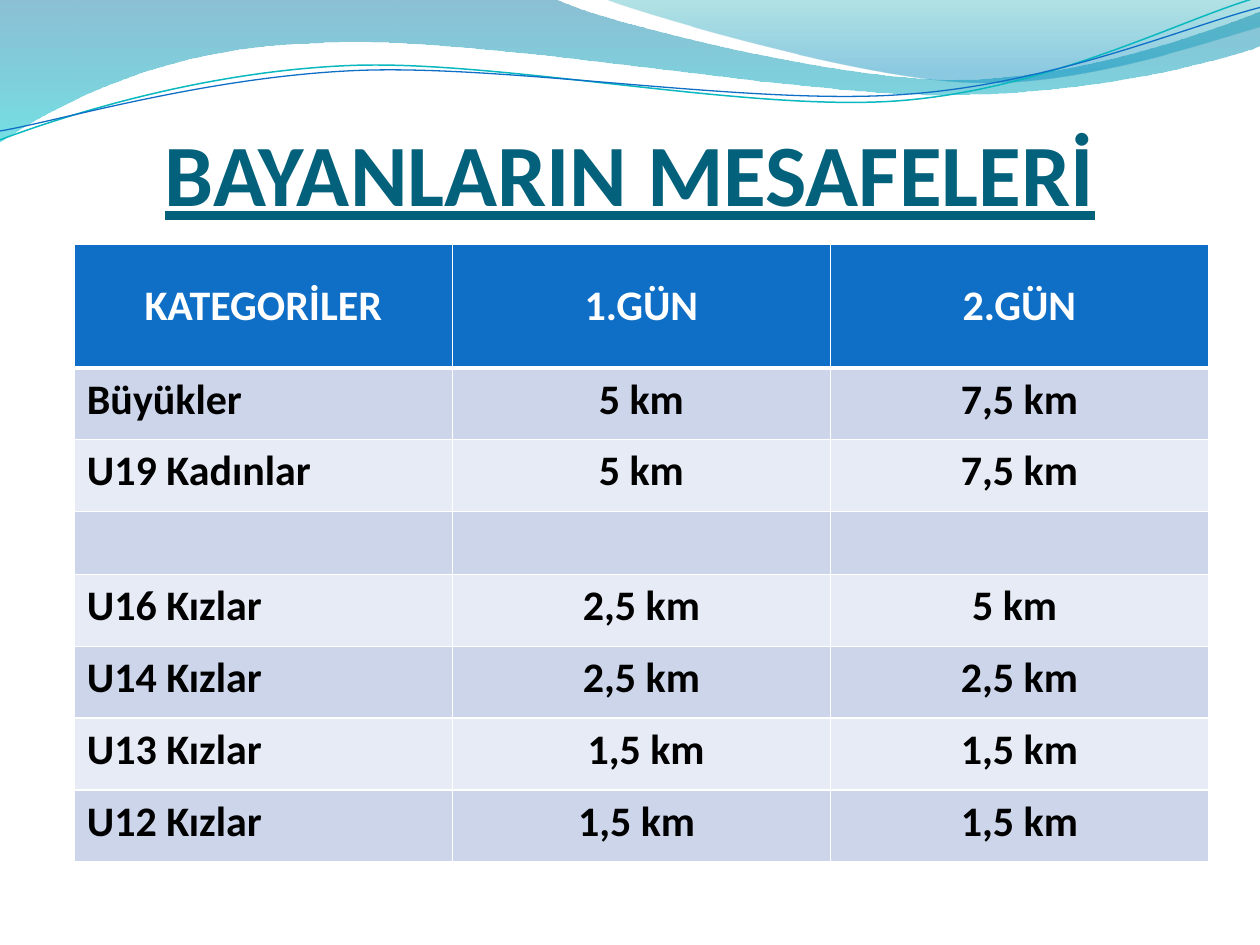
from dataclasses import dataclass
from math import cos, radians, sin
from typing import Optional

from lxml.etree import SubElement
from pptx import Presentation
from pptx.dml.color import RGBColor
from pptx.enum.text import MSO_ANCHOR, PP_ALIGN
from pptx.oxml.ns import qn
from pptx.util import Inches, Pt

WHITE = RGBColor(0xFF, 0xFF, 0xFF)
BLACK = RGBColor(0x00, 0x00, 0x00)
BLUE = RGBColor(0x0F, 0x6F, 0xC6)
TEAL = RGBColor(0x0A, 0xB8, 0xBF)
TITLE_TEAL = RGBColor(0x04, 0x61, 0x7B)
BAND_DARK = RGBColor(0xCC, 0xD5, 0xEA)
BAND_LIGHT = RGBColor(0xE7, 0xEB, 0xF5)
WAVE_BLUE = RGBColor(0x00, 0x74, 0xA1)
WAVE_CYAN = RGBColor(0x00, 0xC6, 0xCF)
CREST_GREEN = RGBColor(0x00, 0xA1, 0xA9)
CREST_BLUE = RGBColor(0x00, 0x8B, 0xBF)
FONT = "Calibri"

Point = tuple[float, float]


@dataclass
class GradientStop:
    position: float
    color: RGBColor
    opacity: int


@dataclass
class Wave:
    """Each segment has two numbers for a line or six for a cubic curve."""
    start: Point
    segments: list[tuple[float, ...]]
    stops: Optional[list[GradientStop]] = None
    line_color: Optional[RGBColor] = None
    line_width: float = 0
    rotation: float = 0
    center: Point = (0, 0)


WAVES = [
    Wave((0, 0), [
        (4.4, -0.01),
        (4.76, 0.17, 6.64, 0.63, 7.58, 0.63),
        (8.53, 0.63, 9.58, 0.26, 10, 0.09),
        (10.01, 0.36),
        (9.83, 0.44, 8.7, 0.76, 7.46, 0.75),
        (6.22, 0.75, 3.82, 0.28, 2.57, 0.34),
        (1.29, 0.36, 0.46, 0.83, -0.01, 1.13),
    ], stops=[GradientStop(0, WAVE_BLUE, 45), GradientStop(1, WAVE_CYAN, 55)]),
    Wave((4.79, -0.01), [
        (5.09, 0.11, 6.82, 0.62, 7.69, 0.65),
        (8.56, 0.69, 9.61, 0.32, 10, 0.21),
        (10, 0),
    ], stops=[GradientStop(0, CREST_GREEN, 30), GradientStop(0.8, CREST_BLUE, 45)]),
    Wave((0, 1.11), [
        (0.48, 0.93, 1.58, 0.57, 2.77, 0.52),
        (3.95, 0.47, 5.93, 0.89, 7.13, 0.8),
        (8.33, 0.71, 9.38, 0.15, 9.98, -0.02),
    ], line_color=TEAL, line_width=0.85, rotation=357.3, center=(4.99, 0.57)),
    Wave((0, 1.04), [
        (0.47, 0.96, 1.64, 0.61, 2.83, 0.56),
        (4.03, 0.51, 5.97, 0.84, 7.17, 0.75),
        (8.36, 0.67, 9.41, 0.21, 10, 0.06),
    ], line_color=BLUE, line_width=0.75, rotation=357.3, center=(5, 0.59)),
]

ROWS = [
    ("KATEGORİLER", "1.GÜN", "2.GÜN"),
    ("Büyükler", "5 km", "7,5 km"),
    ("U19 Kadınlar", "5 km", "7,5 km"),
    ("", "", ""),
    ("U16 Kızlar", "2,5 km", "5 km "),
    ("U14 Kızlar", "2,5 km", "2,5 km"),
    ("U13 Kızlar", " 1,5 km", "1,5 km"),
    ("U12 Kızlar", "1,5 km ", "1,5 km"),
]
HEADER_HEIGHT, ROW_HEIGHT, GAP_HEIGHT = 0.98, 0.57, 0.5
COLUMN_WIDTH = 3


def before_rotation(point: Point, wave: Wave) -> Point:
    """Where a point lies before the wave is turned about its center."""
    angle = radians(-wave.rotation)
    x, y = point[0] - wave.center[0], point[1] - wave.center[1]
    return (wave.center[0] + x * cos(angle) - y * sin(angle),
            wave.center[1] + x * sin(angle) + y * cos(angle))


def bend_segments(shape, segments: list[tuple[float, ...]]) -> None:
    """Join each three lines that stand for a curve's points into one cubic curve."""
    lines = iter(list(shape.element.spPr.iter(qn("a:lnTo"))))
    for segment in segments:
        first = next(lines)
        if len(segment) == 6:
            first.tag = qn("a:cubicBezTo")
            for line in (next(lines), next(lines)):
                first.append(line[0])
                line.getparent().remove(line)


def add_wave(slide, wave: Wave) -> None:
    points = [wave.start]
    for segment in wave.segments:
        points += zip(segment[::2], segment[1::2])
    corners = [(Inches(x), Inches(y))
               for x, y in (before_rotation(point, wave) for point in points)]
    builder = slide.shapes.build_freeform(*corners[0])
    builder.add_line_segments(corners[1:], close=wave.stops is not None)
    shape = builder.convert_to_shape()
    bend_segments(shape, wave.segments)
    shape.rotation = wave.rotation
    shape.shadow.inherit = False
    if wave.stops:
        shape.line.fill.background()
        shape.fill.gradient()
        shape.fill.gradient_angle = 270
        for target, stop in zip(shape.fill.gradient_stops, wave.stops):
            target.position = stop.position
            target.color.rgb = stop.color
        for color, stop in zip(shape.element.spPr.iter(qn("a:srgbClr")), wave.stops):
            SubElement(color, qn("a:alpha"), val=str(stop.opacity * 1000))
    else:
        shape.fill.background()
        shape.line.color.rgb = wave.line_color
        shape.line.width = Pt(wave.line_width)


def format_paragraph(paragraph, size: float, color: RGBColor, alignment: PP_ALIGN) -> None:
    paragraph.alignment = alignment
    for run in paragraph.runs:
        run.font.name = FONT
        run.font.size = Pt(size)
        run.font.bold = True
        run.font.color.rgb = color


def add_title(slide) -> None:
    title = slide.shapes.add_textbox(Inches(0.5), Inches(0.77), Inches(9), Inches(1.01))
    frame = title.text_frame
    frame.word_wrap = True
    frame.vertical_anchor = MSO_ANCHOR.BOTTOM
    frame.margin_left = frame.margin_right = frame.margin_bottom = 0
    frame.text = "BAYANLARIN MESAFELERİ"
    format_paragraph(frame.paragraphs[0], 50, TITLE_TEAL, PP_ALIGN.CENTER)
    frame.paragraphs[0].runs[0].font.underline = True


def add_borders(cell, top: float, bottom: float) -> None:
    """White borders; widths in points, 1 at the sides."""
    properties = cell._tc.get_or_add_tcPr()
    for side, width in (("L", 1), ("R", 1), ("T", top), ("B", bottom)):
        line = SubElement(properties, qn(f"a:ln{side}"), w=str(Pt(width)))
        SubElement(SubElement(line, qn("a:solidFill")), qn("a:srgbClr"), val=str(WHITE))


def row_height(row: int) -> float:
    if row == 0:
        return HEADER_HEIGHT
    return ROW_HEIGHT if any(ROWS[row]) else GAP_HEIGHT


def add_distance_table(slide) -> None:
    heights = [row_height(row) for row in range(len(ROWS))]
    columns = len(ROWS[0])
    table = slide.shapes.add_table(
        len(ROWS), columns, Inches(0.59), Inches(1.94),
        Inches(columns * COLUMN_WIDTH), Inches(sum(heights))).table
    for column in table.columns:
        column.width = Inches(COLUMN_WIDTH)
    for row, texts in enumerate(ROWS):
        table.rows[row].height = Inches(heights[row])
        is_header = row == 0
        band = BLUE if is_header else BAND_DARK if row % 2 else BAND_LIGHT
        for column, text in enumerate(texts):
            cell = table.cell(row, column)
            add_borders(cell, top=3 if row == 1 else 1, bottom=3 if is_header else 1)
            cell.fill.solid()
            cell.fill.fore_color.rgb = band
            cell.vertical_anchor = MSO_ANCHOR.MIDDLE if is_header else MSO_ANCHOR.TOP
            if text:
                cell.text_frame.text = text
            centered = is_header or column > 0
            format_paragraph(cell.text_frame.paragraphs[0], 24, WHITE if is_header else BLACK,
                             PP_ALIGN.CENTER if centered else PP_ALIGN.LEFT)


def main() -> None:
    presentation = Presentation()
    presentation.slide_width = Inches(10)
    presentation.slide_height = Inches(7.5)
    slide = presentation.slides.add_slide(presentation.slide_layouts[6])
    for wave in WAVES:
        add_wave(slide, wave)
    add_title(slide)
    add_distance_table(slide)
    presentation.save("out.pptx")


if __name__ == "__main__":
    main()
